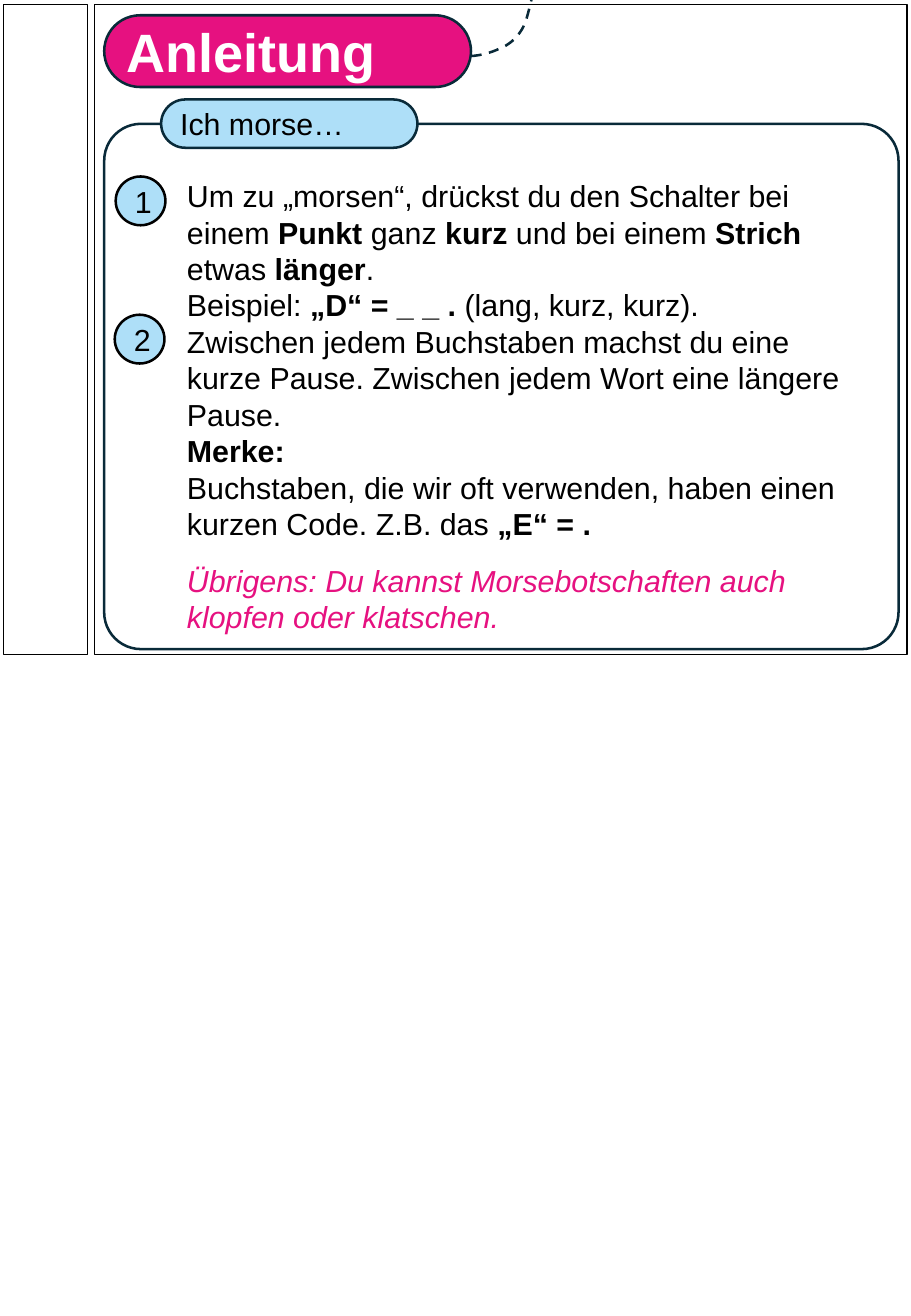
from pptx import Presentation
from pptx.dml.color import RGBColor
from pptx.enum.dml import MSO_LINE_DASH_STYLE as Dash
from pptx.enum.shapes import MSO_SHAPE as Shape
from pptx.enum.text import MSO_ANCHOR as Anchor, PP_ALIGN as Align
from pptx.util import Cm, Pt

PINK = RGBColor(0xE6, 0x11, 0x80)
SKY = RGBColor(0xAE, 0xDF, 0xF8)
NAVY = RGBColor(0x09, 0x2A, 0x39)
WHITE = RGBColor(0xFF, 0xFF, 0xFF)
BLACK = RGBColor(0x00, 0x00, 0x00)

PLAIN, BOLD = False, True
INSTRUCTIONS = [
    [("Um zu „morsen“, drückst du den Schalter bei einem ", PLAIN),
     ("Punkt ", BOLD), ("ganz ", PLAIN), ("kurz", BOLD),
     (" und bei einem ", PLAIN), ("Strich", BOLD), (" etwas ", PLAIN),
     ("länger", BOLD), (".", PLAIN)],
    [("Beispiel: ", PLAIN), ("„D“ = _ _ . ", BOLD),
     ("(lang, kurz, kurz).", PLAIN)],
    [("Zwischen jedem Buchstaben machst du eine kurze Pause. "
      "Zwischen jedem Wort eine längere Pause.", PLAIN)],
    [("Merke:", BOLD)],
    [("Buchstaben, die wir oft verwenden, haben einen kurzen Code. "
      "Z.B. das ", PLAIN), ("„E“ = .", BOLD)],
]
TIP = "Übrigens: Du kannst Morsebotschaften auch klopfen oder klatschen."

WIRE_START = (4.98, 1.83)
WIRE_CURVES = [
    ((5.05, 1.35), (5.26, 0.79), (5.51, 0.56)),
    ((5.77, 0.3), (5.99, 0.36), (6.4, 0.36)),
    ((6.76, 0.41), (7.39, 0.38), (7.9, 0.58)),
    ((8.38, 0.74), (8.97, 0.99), (9.32, 1.14)),
    ((9.75, 1.22), (10.13, 1.17), (10.44, 1.02)),
    ((10.74, 0.91), (10.95, 0.64), (11.02, 0.36)),
    ((11.1, 0.1), (11.15, -0.28), (11.35, -0.61)),
    ((11.46, -0.86), (11.89, -1.3), (12.29, -1.55)),
]
STEPS_PER_CURVE = 12


def style(shape, fill, line, weight=1.5):
    shape.shadow.inherit = False
    if fill is None:
        shape.fill.background()
    else:
        shape.fill.solid()
        shape.fill.fore_color.rgb = fill
    shape.line.color.rgb = line
    shape.line.width = Pt(weight)


def add_run(paragraph, text, size=18, color=BLACK, bold=False, italic=False):
    run = paragraph.add_run()
    run.text = text
    font = run.font
    font.name, font.size = "Arial", Pt(size)
    font.bold, font.italic = bold, italic
    font.color.rgb = color


def add_outline(slide, kind, box, fill, line, weight=1.5, rounding=None):
    outline = slide.shapes.add_shape(kind, *map(Cm, box))
    style(outline, fill, line, weight)
    if rounding is not None:
        outline.adjustments[0] = rounding
    return outline


def add_caption(shape, text, align=Align.LEFT, **font):
    shape.text_frame.vertical_anchor = Anchor.MIDDLE
    paragraph = shape.text_frame.paragraphs[0]
    paragraph.alignment = align
    add_run(paragraph, text, **font)


def add_pill(slide, box, text, fill, **font):
    pill = add_outline(slide, Shape.ROUNDED_RECTANGLE, box, fill, NAVY,
                       rounding=0.5)
    add_caption(pill, text, **font)


def add_step_number(slide, left, top, number):
    disc = add_outline(slide, Shape.OVAL, (left, top, 1.04, 1.02), SKY, BLACK)
    add_caption(disc, str(number), Align.CENTER)


def bezier_point(start, control1, control2, end, t):
    u = 1 - t
    weights = (u ** 3, 3 * u * u * t, 3 * u * t * t, t ** 3)
    corners = (start, control1, control2, end)
    return tuple(Cm(sum(w * corner[axis] for w, corner in zip(weights, corners)))
                 for axis in (0, 1))


def add_wire(slide):
    """Dashed wire that leaves the title and runs over the top edge."""
    points, start = [], WIRE_START
    for curve in WIRE_CURVES:
        points += [bezier_point(start, *curve, step / STEPS_PER_CURVE)
                   for step in range(1, STEPS_PER_CURVE + 1)]
        start = curve[-1]
    builder = slide.shapes.build_freeform(*map(Cm, WIRE_START))
    builder.add_line_segments(points, close=False)
    wire = builder.convert_to_shape()
    style(wire, None, NAVY)
    wire.line.dash_style = Dash.DASH


def add_instructions(slide):
    box = slide.shapes.add_textbox(Cm(3.66), Cm(3.58), Cm(14.78), Cm(10.69))
    frame = box.text_frame
    frame.word_wrap = True
    for index, parts in enumerate(INSTRUCTIONS):
        paragraph = frame.add_paragraph() if index else frame.paragraphs[0]
        for text, bold in parts:
            add_run(paragraph, text, bold=bold)
    tip = frame.add_paragraph()
    tip.space_before = Pt(12)
    add_run(tip, TIP, color=PINK, italic=True)


def main():
    deck = Presentation()
    deck.slide_width, deck.slide_height = Cm(19.05), Cm(27.51)
    slide = deck.slides.add_slide(deck.slide_layouts[6])

    add_wire(slide)
    add_pill(slide, (2.18, 0.32, 7.67, 1.5), "Anleitung", PINK,
             size=32, color=WHITE, bold=True)
    add_outline(slide, Shape.ROUNDED_RECTANGLE, (2.18, 2.59, 16.61, 10.98),
                WHITE, NAVY, rounding=0.07)
    add_pill(slide, (3.37, 2.08, 5.36, 1.01), "Ich morse…", SKY)
    add_step_number(slide, 2.42, 3.69, 1)
    add_step_number(slide, 2.4, 6.58, 2)
    add_instructions(slide)
    for left, width in ((0.08, 1.75), (1.98, 16.99)):
        add_outline(slide, Shape.RECTANGLE, (left, 0.09, width, 13.6),
                    None, BLACK, weight=0.75)

    deck.save("out.pptx")


if __name__ == "__main__":
    main()
